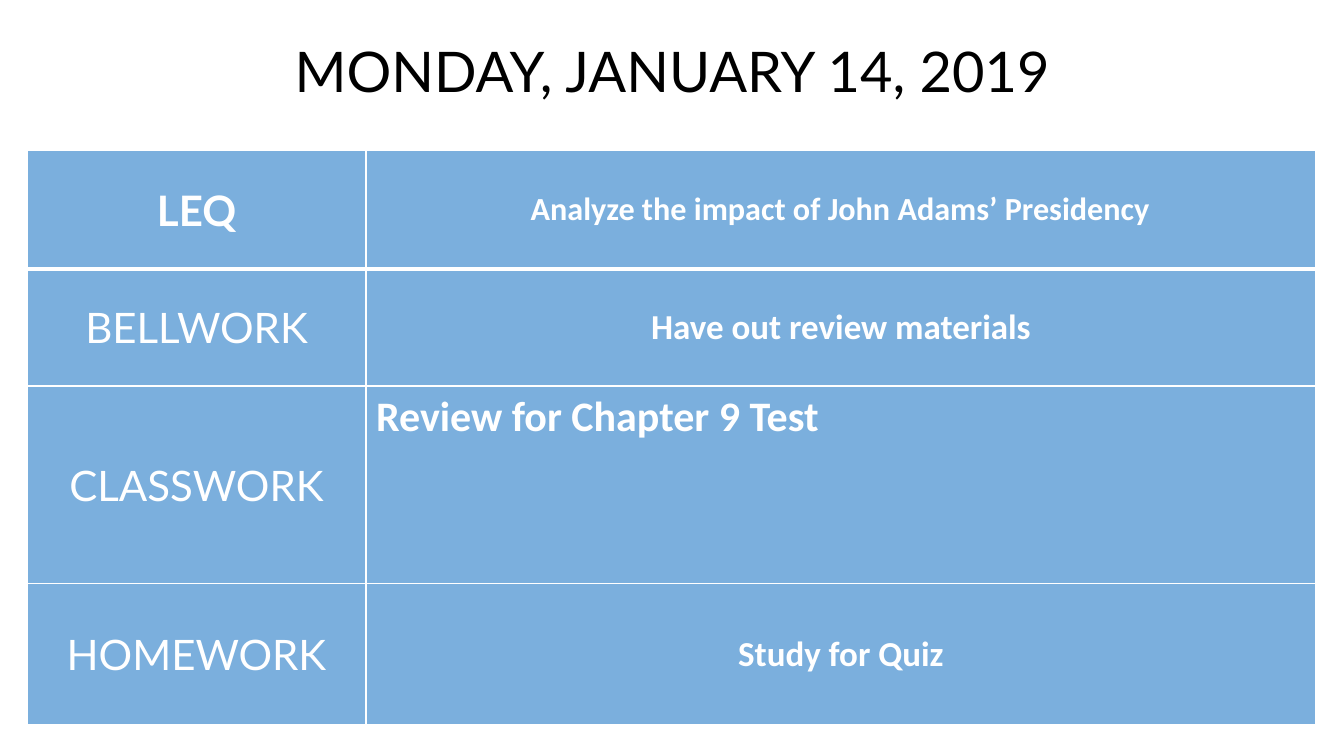
from lxml import etree
from pptx import Presentation
from pptx.dml.color import RGBColor
from pptx.enum.shapes import MSO_SHAPE
from pptx.enum.text import MSO_ANCHOR, PP_ALIGN
from pptx.oxml.ns import qn
from pptx.util import Inches, Pt

RECTANGLE = MSO_SHAPE.RECTANGLE
TOP, MIDDLE = MSO_ANCHOR.TOP, MSO_ANCHOR.MIDDLE
LEFT, CENTER = PP_ALIGN.LEFT, PP_ALIGN.CENTER

WHITE, BLACK, BLUE = "FFFFFF", "000000", "5B9BD5"
LABEL_FONT, TASK_FONT = "Lato", "Calibri"
LABEL_SIZE = 30

COLUMN_WIDTHS = [3.36, 9.42]
ROW_HEIGHTS = [1.18, 1.16, 1.96, 1.4]
# Label, task, task size, task alignment, task anchor
AGENDA = [
    ("LEQ", "Analyze the impact of John Adams’ Presidency", 23, CENTER, MIDDLE),
    ("BELLWORK", "Have out review materials", 25, CENTER, MIDDLE),
    ("CLASSWORK", "Review for Chapter 9 Test", 30, LEFT, TOP),
    ("HOMEWORK", "Study for Quiz", 25, CENTER, MIDDLE),
]


def color(hex_string):
    return RGBColor.from_string(hex_string)


def fill_solid(fill, properties, hex_string, opacity):
    """Fill with a colour at the given opacity in percent."""
    fill.solid()
    fill.fore_color.rgb = color(hex_string)
    fill_color = properties.find(qn("a:solidFill")).find(qn("a:srgbClr"))
    etree.SubElement(fill_color, qn("a:alpha"), val=str(opacity * 1000))


def write_text(text_frame, text, font_name, size, hex_string, bold, alignment):
    text_frame.text = text
    paragraph = text_frame.paragraphs[0]
    paragraph.alignment = alignment
    font = paragraph.runs[0].font
    font.name, font.size, font.bold = font_name, Pt(size), bold
    font.color.rgb = color(hex_string)


def add_borders(cell_properties, widths):
    """Draw white borders; widths maps each side to points."""
    for position, (side, width) in enumerate(widths.items()):
        line = etree.Element(qn(f"a:ln{side}"), w=str(Pt(width)))
        line_fill = etree.SubElement(line, qn("a:solidFill"))
        etree.SubElement(line_fill, qn("a:srgbClr"), val=WHITE)
        cell_properties.insert(position, line)


def add_title(slide, left, top, width, height):
    shape = slide.shapes.add_shape(
        RECTANGLE, Inches(left), Inches(top), Inches(width), Inches(height))
    shape.shadow.inherit = False
    shape.line.fill.background()
    fill_solid(shape.fill, shape.element.spPr, WHITE, 65)
    shape.text_frame.word_wrap = True
    shape.text_frame.vertical_anchor = MIDDLE
    write_text(shape.text_frame, "MONDAY, JANUARY 14, 2019",
               LABEL_FONT, 40, BLACK, False, CENTER)


def add_agenda(slide, left, top, width, height):
    table = slide.shapes.add_table(
        len(AGENDA), len(COLUMN_WIDTHS),
        Inches(left), Inches(top), Inches(width), Inches(height)).table
    for column, column_width in zip(table.columns, COLUMN_WIDTHS):
        column.width = Inches(column_width)
    for row, row_height in zip(table.rows, ROW_HEIGHTS):
        row.height = Inches(row_height)

    for index, (label, task, size, alignment, anchor) in enumerate(AGENDA):
        is_header = index == 0
        label_cell, task_cell = table.cell(index, 0), table.cell(index, 1)
        write_text(label_cell.text_frame, label,
                   LABEL_FONT, LABEL_SIZE, WHITE, is_header, CENTER)
        write_text(task_cell.text_frame, task,
                   TASK_FONT, size, WHITE, True, alignment)
        label_cell.vertical_anchor = MIDDLE
        task_cell.vertical_anchor = anchor

        # A thick rule separates the header from the rows below
        borders = {"L": 1, "R": 1, "T": 3 if index == 1 else 1,
                   "B": 3 if is_header else 1}
        for cell in (label_cell, task_cell):
            cell_properties = cell._tc.get_or_add_tcPr()
            fill_solid(cell.fill, cell_properties, BLUE, 80)
            add_borders(cell_properties, borders)


def main():
    presentation = Presentation()
    presentation.slide_width = Inches(13.33)
    presentation.slide_height = Inches(7.5)
    slide = presentation.slides.add_slide(presentation.slide_layouts[6])
    slide.background.fill.solid()
    slide.background.fill.fore_color.rgb = color(WHITE)
    add_agenda(slide, 0.27, 1.49, sum(COLUMN_WIDTHS), sum(ROW_HEIGHTS))
    add_title(slide, 0.27, 0.2, 12.79, 1)
    presentation.save("out.pptx")


if __name__ == "__main__":
    main()
